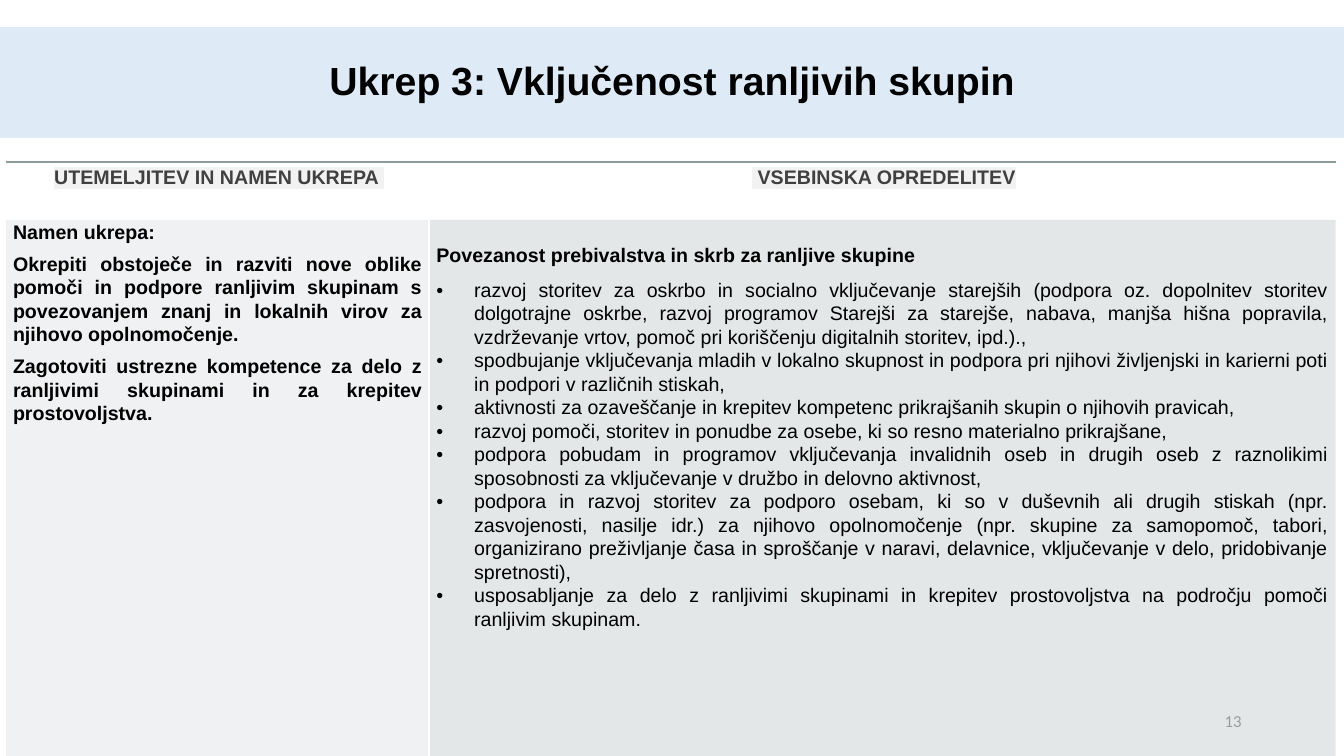
from lxml.etree import SubElement
from pptx import Presentation
from pptx.dml.color import RGBColor
from pptx.enum.shapes import MSO_SHAPE
from pptx.enum.text import MSO_ANCHOR, PP_ALIGN
from pptx.oxml.ns import qn
from pptx.util import Pt

WIDTH, HEIGHT = 960, 540
NO_GRID_STYLE = "{2D5ABB26-0587-4C30-8999-92F81FD0307C}"

HEADERS = ["UTEMELJITEV IN NAMEN UKREPA ", " VSEBINSKA OPREDELITEV"]
PURPOSE = [
    "Namen ukrepa: ",
    "Okrepiti obstoječe in razviti nove oblike pomoči in podpore ranljivim skupinam s "
    "povezovanjem znanj in lokalnih virov za njihovo opolnomočenje. ",
    "Zagotoviti ustrezne kompetence za delo z ranljivimi skupinami in za krepitev "
    "prostovoljstva. ",
]
CONTENT_HEADING = "Povezanost prebivalstva in skrb za ranljive skupine"
ACTIVITIES = [
    "razvoj storitev za oskrbo in socialno vključevanje starejših (podpora oz. dopolnitev "
    "storitev dolgotrajne oskrbe, razvoj programov Starejši za starejše, nabava, manjša hišna "
    "popravila, vzdrževanje vrtov, pomoč pri koriščenju digitalnih storitev, ipd.).,",
    "spodbujanje vključevanja mladih v lokalno skupnost in podpora pri njihovi življenjski in "
    "karierni poti in podpori v različnih stiskah, ",
    "aktivnosti za ozaveščanje in krepitev kompetenc prikrajšanih skupin o njihovih pravicah,",
    "razvoj pomoči, storitev in ponudbe za osebe, ki so resno materialno prikrajšane, ",
    "podpora pobudam in programov vključevanja invalidnih oseb in drugih oseb z raznolikimi "
    "sposobnosti za vključevanje v družbo in delovno aktivnost, ",
    "podpora in razvoj storitev za podporo osebam, ki so v duševnih ali drugih stiskah (npr. "
    "zasvojenosti, nasilje idr.) za njihovo opolnomočenje (npr. skupine za samopomoč, tabori, "
    "organizirano preživljanje časa in sproščanje v naravi, delavnice, vključevanje v delo, "
    "pridobivanje spretnosti), ",
    "usposabljanje za delo z ranljivimi skupinami in krepitev prostovoljstva na področju pomoči "
    "ranljivim skupinam.",
]


def color(value):
    return RGBColor.from_string(value)


def add_text(frame, text, size=14, font="Arial", fill="000000", bold=False,
             align=PP_ALIGN.LEFT, spacing=1.07, after=0, highlight=None, bullet=None):
    """Fill the empty first paragraph, or add another one."""
    para = frame.paragraphs[-1]
    if para.runs:
        para = frame.add_paragraph()
    para.alignment, para.line_spacing, para.space_after = align, spacing, Pt(after)
    span = para.add_run()
    span.text = text
    span.font.size, span.font.name, span.font.bold = Pt(size), font, bold
    span.font.color.rgb = color(fill)
    if highlight:
        properties = span.font.fill._xPr
        mark = SubElement(properties, qn("a:highlight"))
        SubElement(mark, qn("a:srgbClr"), val=highlight)
        properties.find(qn("a:solidFill")).addnext(mark)
    if bullet:
        properties = para._p.get_or_add_pPr()
        properties.set("marL", str(Pt(27)))
        properties.set("indent", str(Pt(-27)))
        SubElement(properties, qn("a:buFont"), typeface="Arial")
        SubElement(properties, qn("a:buChar"), char=bullet)


def set_margins(cell, left, top, right, bottom):
    cell.margin_left, cell.margin_top = Pt(left), Pt(top)
    cell.margin_right, cell.margin_bottom = Pt(right), Pt(bottom)


def set_alpha(parent, percent):
    SubElement(parent, qn("a:alpha"), val=str(percent * 1000))


def add_border(cell_properties, side, value, alpha=None):
    line = SubElement(cell_properties, qn(f"a:ln{side}"), w=str(Pt(1.5)))
    cell_properties.insert(0, line)
    paint = SubElement(SubElement(line, qn("a:solidFill")), qn("a:srgbClr"), val=value)
    if alpha:
        set_alpha(paint, alpha)
    SubElement(line, qn("a:prstDash"), val="solid")


def add_title(page, left, top, width, height):
    box = page.shapes.add_shape(MSO_SHAPE.RECTANGLE, Pt(left), Pt(top), Pt(width), Pt(height))
    box.shadow.inherit = False
    box.fill.solid()
    box.fill.fore_color.rgb = color("DEEBF7")
    box.line.fill.background()
    box.text_frame.word_wrap = True
    box.text_frame.vertical_anchor = MSO_ANCHOR.MIDDLE
    add_text(box.text_frame, "Ukrep 3: Vključenost ranljivih skupin", size=28, bold=True,
             align=PP_ALIGN.CENTER, spacing=0.9, after=6)


def add_page_number(page, left, top, width, height):
    box = page.shapes.add_textbox(Pt(left), Pt(top), Pt(width), Pt(height))
    box.text_frame.word_wrap = True
    box.text_frame.vertical_anchor = MSO_ANCHOR.MIDDLE
    add_text(box.text_frame, "13", size=12, font="Calibri", fill="8C8C8C",
             align=PP_ALIGN.RIGHT, spacing=1.0, after=6)


def add_measure_table(page, left, top, width, height):
    frame = page.shapes.add_table(2, 2, Pt(left), Pt(top), Pt(width), Pt(height))
    table = frame.table
    table.first_row = table.horz_banding = False
    next(frame.element.iter(qn("a:tableStyleId"))).text = NO_GRID_STYLE
    purpose_width, header_height = 302.4, 41
    table.columns[0].width, table.columns[1].width = Pt(purpose_width), Pt(width - purpose_width)
    table.rows[0].height, table.rows[1].height = Pt(header_height), Pt(height - header_height)

    # Header row
    for column, header in enumerate(HEADERS):
        cell = table.cell(0, column)
        cell.fill.background()
        set_margins(cell, 4.3, 2.2, 2.2, 2.2)
        add_text(cell.text_frame, header, fill="404040", bold=True, align=PP_ALIGN.CENTER,
                 after=8, highlight="F2F2F2")

    # Body row: the content column starts lower than the purpose column
    purpose, content = table.cell(1, 0), table.cell(1, 1)
    for cell, gap in ((purpose, 0), (content, 16.6)):
        cell.fill.solid()
        cell.fill.fore_color.rgb = color("B4BCBE")
        set_margins(cell, 5, gap, 5, 0)
    for text in PURPOSE:
        add_text(purpose.text_frame, text, bold=True, align=PP_ALIGN.JUSTIFY, after=6)
    add_text(content.text_frame, CONTENT_HEADING, bold=True, after=8)
    for text in ACTIVITIES:
        add_text(content.text_frame, text, align=PP_ALIGN.JUSTIFY, bullet="•",
                 after=8 if text == ACTIVITIES[-1] else 0)

    # Borders and transparent fills
    cells = list(frame.element.iter(qn("a:tcPr")))
    for properties, alpha in zip(cells[2:], (20, 35)):
        set_alpha(properties.find(qn("a:solidFill")).find(qn("a:srgbClr")), alpha)
    for properties in cells[:2]:
        add_border(properties, "T", "8F9A9D", alpha=60)
    for properties, side in zip(cells[2:], "RL"):
        add_border(properties, side, "FFFFFF")


def main():
    deck = Presentation()
    deck.slide_width, deck.slide_height = Pt(WIDTH), Pt(HEIGHT)
    page = deck.slides.add_slide(deck.slide_layouts[6])
    add_title(page, 0, 19.4, WIDTH, 79.2)
    add_page_number(page, 678, 500.5, 216, 28.8)
    add_measure_table(page, 4.3, 116, 949.7, HEIGHT - 116)
    deck.save("out.pptx")


if __name__ == "__main__":
    main()
